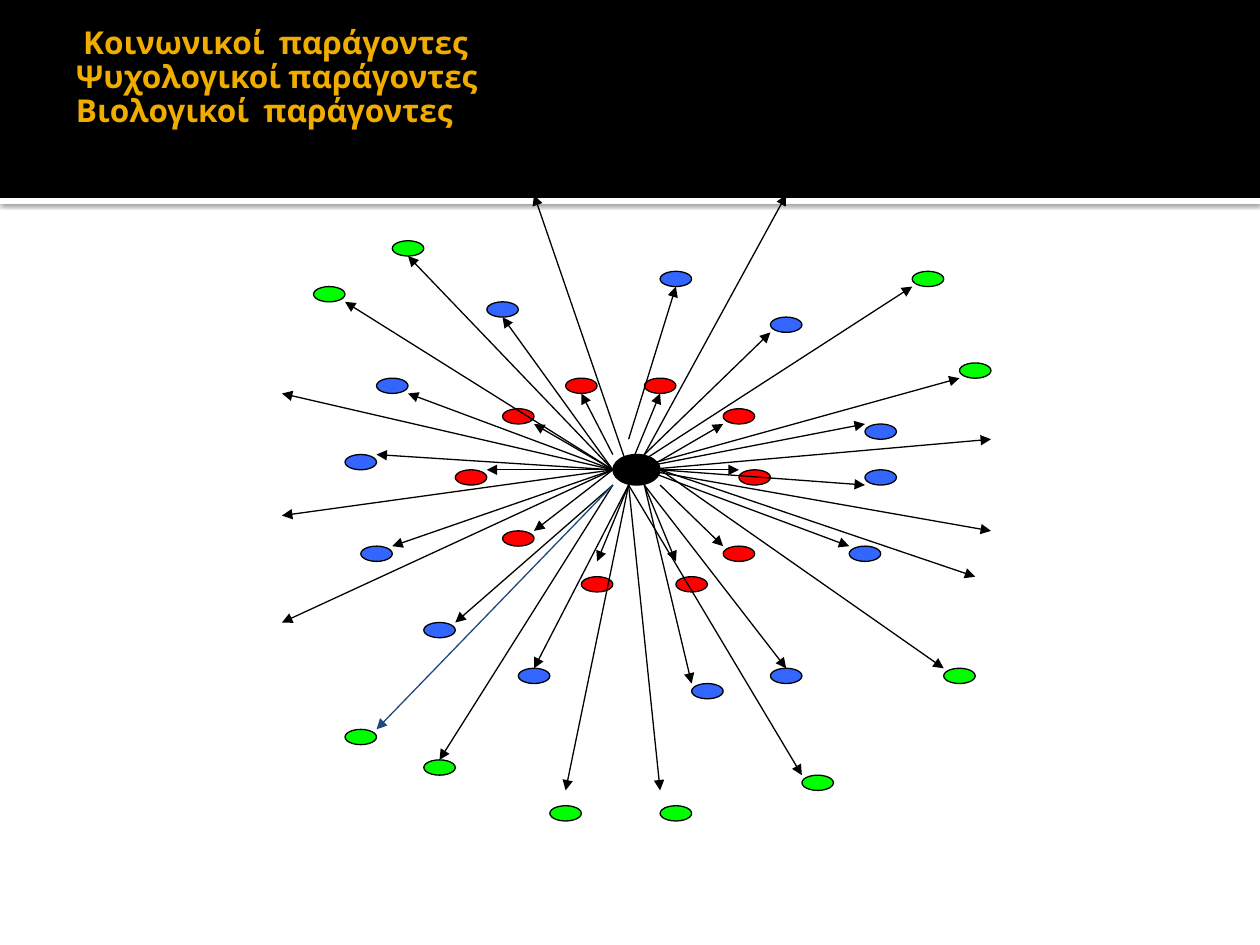
import pptx
import pptx.util
import pptx.oxml
import pptx.oxml.ns
import pptx.dml.color
import pptx.enum.shapes
import pptx.enum.text

PX = 914400 / 126
COLS, ROWS = 45, 41
SHAPE = pptx.enum.shapes.MSO_SHAPE
NS = pptx.oxml.ns.nsdecls("a")

TITLE = " Κοινωνικοί  παράγοντες\nΨυχολογικοί παράγοντες\nΒιολογικοί  παράγοντες"

HUB = (21, 17)
FACTORS = {
    "FF0000": [(18, 12), (23, 12), (11, 18), (28, 14), (29, 18), (14, 22),
               (19, 25), (14, 14), (28, 23), (25, 25)],
    "3366FF": [(4, 17), (15, 31), (13, 7), (24, 5), (9, 28), (6, 12), (36, 23),
               (26, 32), (5, 23), (37, 18), (31, 31), (31, 8), (37, 15)],
    "00FF00": [(4, 35), (2, 6), (7, 3), (33, 38), (17, 40), (43, 11), (42, 31),
               (40, 5), (24, 40), (9, 37)],
}
RAYS = {
    (21, 16 + 1): [(19, 13)],
    (21, 18): [(13, 18), (16, 15), (8, 13), (8, 4), (0, 13), (6, 17), (14, 8),
               (21, 18), (0, 21), (4, 7), (7, 23), (0, 28), (16, 22)],
    (21, 19): [(11, 28), (10, 37)],
    (22, 16): [(25, 6)],
    (22, 18): [(24, 13), (31, 9), (40, 6), (43, 12), (16, 0), (37, 15)],
    (22, 19): [(20, 24), (18, 39), (16, 31), (24, 39), (33, 38)],
    (23, 17): [(32, 0)],
    (23, 18): [(28, 15), (29, 18), (36, 23), (45, 16), (45, 22)],
    (23, 19): [(32, 31), (26, 32), (25, 24)],
    (24, 18): [(42, 31), (44, 25), (37, 19)],
    (24, 19): [(28, 23)],
}
BLUE_RAY = ((21, 19), (6, 35))


def emu(px):
    return pptx.util.Emu(round(px * PX))


def rgb(color):
    return pptx.dml.color.RGBColor.from_string(color)


def add_filled(shapes, kind, x, y, w, h, fill, line=None):
    sp = shapes.add_shape(kind, emu(x), emu(y), emu(w), emu(h))
    sp.shadow.inherit = False
    sp.fill.solid()
    sp.fill.fore_color.rgb = rgb(fill)
    if line:
        sp.line.color.rgb = rgb(line)
        sp.line.width = pptx.util.Pt(0.75)
    else:
        sp.line.fill.background()
    return sp


def add_arrow(shapes, x1, y1, x2, y2, color):
    cxn = shapes.add_connector(pptx.enum.shapes.MSO_CONNECTOR.STRAIGHT,
                               emu(x1), emu(y1), emu(x2), emu(y2))
    cxn.line.color.rgb = rgb(color)
    cxn.line.width = pptx.util.Pt(0.75)
    cxn.line._get_or_add_ln().append(
        pptx.oxml.parse_xml(f'<a:tailEnd {NS} type="triangle"/>'))
    cxn.element.spPr.append(pptx.oxml.parse_xml(f"<a:effectLst {NS}/>"))


def add_header(s, x, y, w, h):
    strip = add_filled(s.shapes, SHAPE.RECTANGLE, x, y + h, w, 6, "FFFFFF")
    effects = strip.element.spPr.find(pptx.oxml.ns.qn("a:effectLst"))
    effects.append(pptx.oxml.parse_xml(
        f'<a:outerShdw {NS} blurRad="31750" dist="10160" dir="5400000" '
        'algn="tl" rotWithShape="0"><a:srgbClr val="000000">'
        '<a:alpha val="60000"/></a:srgbClr></a:outerShdw>'))
    add_filled(s.shapes, SHAPE.RECTANGLE, x, y, w, h, "000000")

    title = s.shapes.title
    s.shapes.element.append(title.element)
    title.left, title.top = emu(x + 63), emu(y + 21)
    title.width, title.height = emu(w - 126), emu(h - 25)
    tf = title.text_frame
    tf.word_wrap = True
    tf.auto_size = pptx.enum.text.MSO_AUTO_SIZE.NONE
    tf.vertical_anchor = pptx.enum.text.MSO_ANCHOR.TOP
    tf.margin_left = emu(13)
    tf.margin_top = tf.margin_right = tf.margin_bottom = emu(6)
    tf.text = TITLE
    for p in tf.paragraphs:
        p.alignment = pptx.enum.text.PP_ALIGN.LEFT
        p.line_spacing = 0.9
        p.space_before = pptx.util.Pt(0)
        p.font.name = "Cabin"
        p.font.size = pptx.util.Pt(18)
        p.font.bold = True
        p.font.color.rgb = rgb("F0AD00")


def add_factor_web(s, x, y, w, h):
    dx, dy = w / COLS, h / ROWS
    shapes = s.shapes.add_group_shape().shapes

    def at(cell):
        return x + cell[0] * dx, y + cell[1] * dy

    for color, cells in FACTORS.items():
        for cell in cells:
            add_filled(shapes, SHAPE.FLOWCHART_CONNECTOR, *at(cell),
                       2 * dx, dy, color, "000000")
    add_filled(shapes, SHAPE.FLOWCHART_CONNECTOR, *at(HUB),
               3 * dx, 2 * dy, "000000", "000000")
    for start, ends in RAYS.items():
        for end in ends:
            add_arrow(shapes, *at(start), *at(end), "000000")
    start, end = BLUE_RAY
    add_arrow(shapes, *at(start), *at(end), "1F497D")


def main():
    prs = pptx.Presentation()
    prs.slide_width, prs.slide_height = emu(1260), emu(945)
    s = prs.slides.add_slide(prs.slide_layouts[5])
    add_header(s, 0, 0, 1260, 198)
    add_factor_web(s, 282, 195, 709, 626)
    prs.save("out.pptx")


if __name__ == "__main__":
    main()
